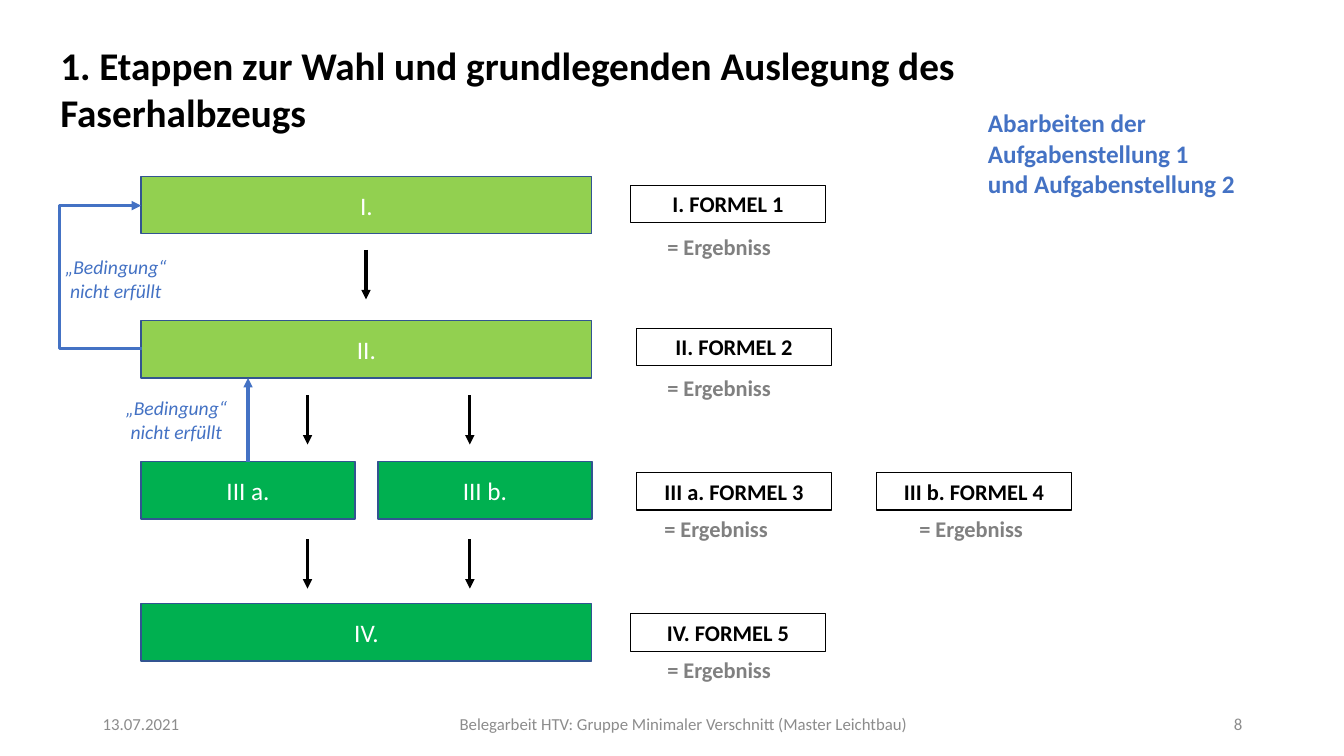
"""Build a flow chart slide on choosing and designing a semi-finished fibre product."""
from lxml import etree
from pptx import Presentation
from pptx.dml.color import RGBColor
from pptx.enum.shapes import MSO_CONNECTOR, MSO_SHAPE
from pptx.enum.text import MSO_ANCHOR, PP_ALIGN
from pptx.oxml.ns import qn
from pptx.util import Inches, Pt

BLACK = RGBColor(0x00, 0x00, 0x00)
WHITE = RGBColor(0xFF, 0xFF, 0xFF)
BLUE = RGBColor(0x44, 0x72, 0xC4)
NAVY = RGBColor(0x32, 0x54, 0x91)
LIGHT_GREEN = RGBColor(0x92, 0xD0, 0x50)
GREEN = RGBColor(0x00, 0xB0, 0x50)
GRAY = RGBColor(0x80, 0x80, 0x80)
FOOTER_GRAY = RGBColor(0x8C, 0x8C, 0x8C)

STRAIGHT, ELBOW = MSO_CONNECTOR.STRAIGHT, MSO_CONNECTOR.ELBOW
RECTANGLE = MSO_SHAPE.RECTANGLE
TOP, MIDDLE = MSO_ANCHOR.TOP, MSO_ANCHOR.MIDDLE
LEFT, CENTER, RIGHT = PP_ALIGN.LEFT, PP_ALIGN.CENTER, PP_ALIGN.RIGHT

STAGE_LEFT, FULL_WIDTH, HALF_WIDTH, STAGE_HEIGHT = 1.4, 4.47, 2.12, 0.57
HALF_LEFT = STAGE_LEFT + FULL_WIDTH - HALF_WIDTH
STAGES = [
    ("I.", STAGE_LEFT, 1.75, FULL_WIDTH, LIGHT_GREEN),
    ("II.", STAGE_LEFT, 3.18, FULL_WIDTH, LIGHT_GREEN),
    ("III a.", STAGE_LEFT, 4.58, HALF_WIDTH, GREEN),
    ("III b.", HALF_LEFT, 4.58, HALF_WIDTH, GREEN),
    ("IV.", STAGE_LEFT, 5.99, FULL_WIDTH, GREEN),
]
FORMULAS = [
    ("I. FORMEL 1", 6.25, 1.84),
    ("II. FORMEL 2", 6.31, 3.26),
    ("III a. FORMEL 3", 6.31, 4.69),
    ("III b. FORMEL 4", 8.69, 4.69),
    ("IV. FORMEL 5", 6.25, 6.09),
]
RESULTS = [(6.52, 2.26), (6.52, 3.66), (6.49, 5.06), (9.02, 5.06), (6.52, 6.46)]
DOWN_ARROWS = [(3.63, 2.48), (3.05, 3.92), (4.66, 3.92), (3.05, 5.35), (4.66, 5.35)]
ARROW_LENGTH = 0.49
CONDITIONS = [(0.45, 2.48), (1.05, 3.88)]
FOOTERS = [
    ("13.07.2021", 0.92, 3, LEFT),
    ("Belegarbeit HTV: Gruppe Minimaler Verschnitt (Master Leichtbau)", 4.42, 4.72, CENTER),
    ("8", 9.42, 3, RIGHT),
]


def write_text(shape, lines, size, color, align=LEFT, anchor=TOP, bold=False, italic=False, wrap=True):
    """Fill a shape with one paragraph per line in a common format."""
    frame = shape.text_frame
    frame.word_wrap = wrap
    frame.vertical_anchor = anchor
    frame.text = "\n".join(lines)
    for paragraph in frame.paragraphs:
        paragraph.alignment = align
        font = paragraph.font
        font.name, font.size, font.bold, font.italic = "Calibri", Pt(size), bold, italic
        font.color.rgb = color


def add_text(slide, lines, left, top, width, height, size, color, **style):
    """Add a text box."""
    box = slide.shapes.add_textbox(Inches(left), Inches(top), Inches(width), Inches(height))
    write_text(box, lines, size, color, **style)


def add_box(slide, text, left, top, width, height, fill, line, line_width, size, color, **style):
    """Add an outlined rectangle with centred text; no fill colour leaves it open."""
    shape = slide.shapes.add_shape(RECTANGLE, Inches(left), Inches(top), Inches(width), Inches(height))
    shape.shadow.inherit = False
    if fill is None:
        shape.fill.background()
    else:
        shape.fill.solid()
        shape.fill.fore_color.rgb = fill
    shape.line.color.rgb = line
    shape.line.width = Pt(line_width)
    write_text(shape, [text], size, color, align=CENTER, **style)


def add_arrow(slide, start, end, color, kind=STRAIGHT):
    """Add a connector with a triangular head at its end."""
    points = [Inches(value) for value in (*start, *end)]
    connector = slide.shapes.add_connector(kind, *points)
    connector.line.color.rgb = color
    connector.line.width = Pt(2.25)
    properties = connector._element.spPr
    etree.SubElement(properties.find(qn("a:ln")), qn("a:tailEnd"), type="triangle")
    etree.SubElement(properties, qn("a:effectLst"))
    return connector


def add_return_loop(slide, left, right, top, bottom):
    """Add an elbow arrow that leaves to the left and returns higher up."""
    width = 0.01
    connector = add_arrow(slide, (right, top), (right + width, bottom), BLUE, ELBOW)
    connector.rotation = 180
    properties = connector._element.spPr
    properties.find(qn("a:xfrm")).set("rot", str(180 * 60000))
    geometry = properties.find(qn("a:prstGeom"))
    guides = geometry.find(qn("a:avLst"))
    bend = round((right + width - left) / width * 100000)
    etree.SubElement(guides, qn("a:gd"), name="adj1", fmla=f"val {bend}")


def main():
    """Build and save the slide."""
    presentation = Presentation()
    presentation.slide_width, presentation.slide_height = Inches(13.33), Inches(7.5)
    slide = presentation.slides.add_slide(presentation.slide_layouts[6])

    add_text(slide, ["1. Etappen zur Wahl und grundlegenden Auslegung des Faserhalbzeugs"],
             0.5, 0.36, 11.16, 0.57, 28, BLACK, bold=True)
    for text, left, width, align in FOOTERS:
        add_text(slide, [text], left, 6.98, width, 0.4, 12, FOOTER_GRAY, align=align, anchor=MIDDLE)
    for text, left, top, width, fill in STAGES:
        add_box(slide, text, left, top, width, STAGE_HEIGHT, fill, NAVY, 1, 18, WHITE, anchor=MIDDLE)
    for text, left, top in FORMULAS:
        add_box(slide, text, left, top, 1.94, 0.37, None, BLACK, 0.75, 16, BLACK, bold=True)
    for left, top in RESULTS:
        add_text(slide, ["= Ergebniss"], left, top, 1.4, 0.37, 16, GRAY, bold=True)
    for left, top in DOWN_ARROWS:
        add_arrow(slide, (left, top), (left, top + ARROW_LENGTH), BLACK)
    add_return_loop(slide, 0.58, STAGE_LEFT, 2.04, 3.46)
    add_arrow(slide, (2.46, 4.58), (2.46, 3.75), BLUE)
    for left, top in CONDITIONS:
        add_text(slide, ["„Bedingung“", "nicht erfüllt"], left, top, 1.4, 0.57, 14, BLUE,
                 align=CENTER, italic=True)
    add_text(slide, ["Abarbeiten der", "Aufgabenstellung 1", "und Aufgabenstellung 2"],
             9.7, 1.02, 2.67, 1.01, 18, BLUE, bold=True, wrap=False)
    presentation.save("out.pptx")


if __name__ == "__main__":
    main()
